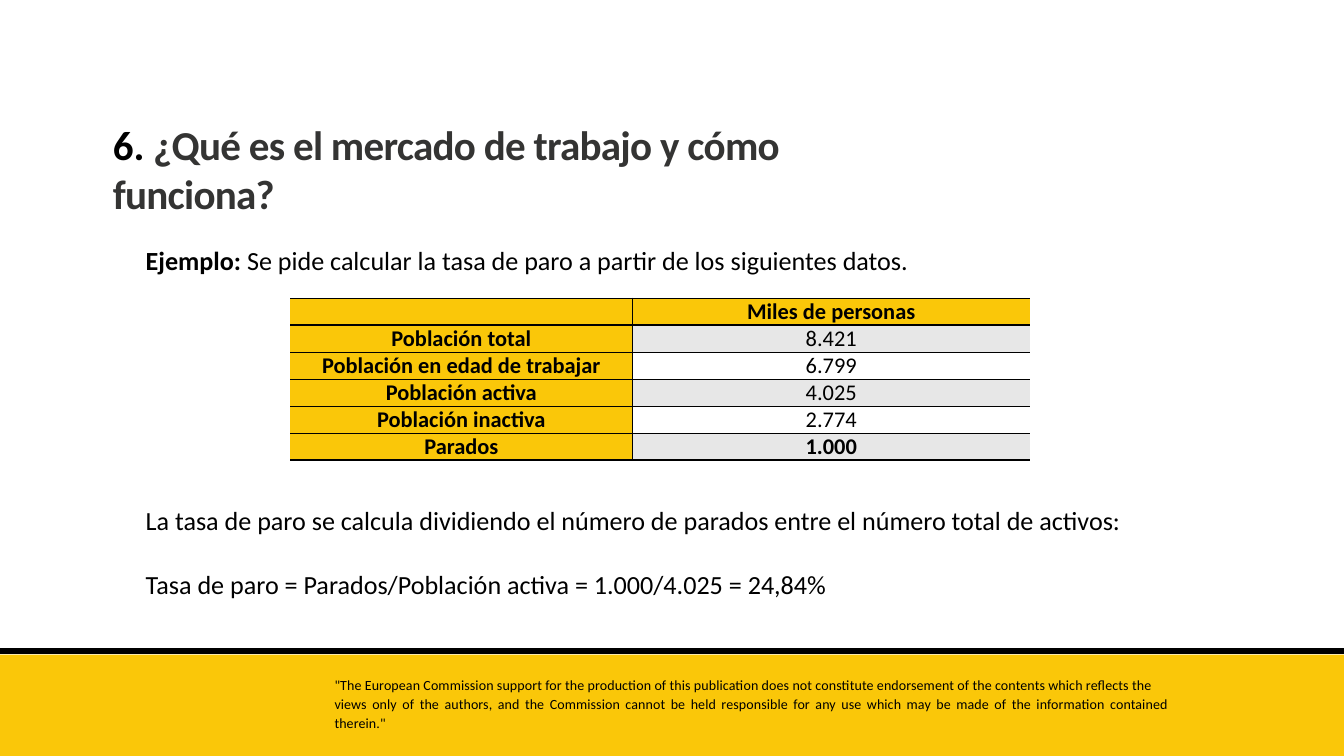
from dataclasses import dataclass
from typing import NamedTuple

import pptx
import pptx.dml.color
import pptx.enum.shapes
import pptx.enum.text
import pptx.oxml
import pptx.oxml.ns
import pptx.util

TITLE_ONLY = 5
SLIDE_WIDTH = pptx.util.Inches(20)
SLIDE_HEIGHT = pptx.util.Inches(11.25)
ALIGN = pptx.enum.text.PP_ALIGN
ANCHOR = pptx.enum.text.MSO_ANCHOR


@dataclass(frozen=True)
class Theme:
    font: str = "Calibri"
    black: str = "000000"
    heading: str = "343433"
    yellow: str = "FAC709"
    bands: tuple[str, str] = ("E7E7E7", "FFFFFF")
    title_size: int = 44
    body_size: int = 28
    table_size: int = 24
    footer_size: int = 15
    thin: int = 1
    thick: int = 2
    rule: float = 6.75


THEME = Theme()


class Area(NamedTuple):
    """A place on the slide, in percent of its width and height."""
    left: float
    top: float
    width: float
    height: float

    def lengths(self) -> tuple[int, int, int, int]:
        return (across(self.left), down(self.top), across(self.width), down(self.height))


class Run(NamedTuple):
    text: str
    bold: bool = False
    color: str = THEME.black
    spacing: float = 0


class Paragraph(NamedTuple):
    runs: list[Run]
    format: dict = {}


class TextBlock(NamedTuple):
    area: Area
    size: int
    paragraphs: list[Paragraph]


class Row(NamedTuple):
    label: str
    value: str
    bold_value: bool = False


TITLE = TextBlock(Area(7.9, 15.29, 55, 14.04), THEME.title_size, [
    Paragraph([
        Run("6.", True),
        Run(" ¿Qué es el mercado de trabajo y cómo funciona?", True, THEME.heading, -0.8),
    ], {"alignment": ALIGN.LEFT}),
])
FOOTER_INDENT = pptx.util.Inches(0.01)
TEXTS = [
    TextBlock(Area(24.35, 89.24, 63.15, 7.82), THEME.footer_size, [
        Paragraph([Run(
            "\"The European Commission support for the production of this publication does not "
            "constitute endorsement of the contents which reflects the", spacing=0.1)],
            {"alignment": ALIGN.JUSTIFY, "line_spacing": pptx.util.Pt(16.1)}),
        Paragraph([Run(
            "views only of the authors, and the Commission cannot be held responsible for any use "
            "which may be made of the information contained therein.\"", spacing=0.1)],
            {"alignment": ALIGN.JUSTIFY, "line_spacing": 1.13}),
    ]),
    TextBlock(Area(10.35, 31.82, 77.55, 5.07), THEME.body_size, [
        Paragraph([
            Run("Ejemplo:", True),
            Run(" Se pide calcular la tasa de paro a partir de los siguientes datos."),
        ]),
    ]),
    TextBlock(Area(10.35, 66.31, 78.4, 13.42), THEME.body_size, [
        Paragraph([Run("La tasa de paro se calcula dividiendo el número de parados entre "
                       "el número total de activos:")]),
        Paragraph([Run("Tasa de paro = Parados/Población activa = 1.000/4.025 = 24,84%")],
                  {"space_before": pptx.util.Pt(34.2)}),
    ]),
]
TABLE_AREA = Area(21.6, 39.47, 55.05, 21.33)
COLUMN_WIDTHS = (25.45, 29.6)
ROWS = [
    Row("", "Miles de personas", True),
    Row("Población total", "8.421"),
    Row("Población en edad de trabajar", "6.799"),
    Row("Población activa", "4.025"),
    Row("Población inactiva", "2.774"),
    Row("Parados", "1.000", True),
]
BAND_AREA = Area(0, 86.58, 100, 13.42)
RULE_TOP = 86.13


def across(percent: float) -> int:
    return round(SLIDE_WIDTH * percent / 100)


def down(percent: float) -> int:
    return round(SLIDE_HEIGHT * percent / 100)


def rgb(color: str) -> pptx.dml.color.RGBColor:
    return pptx.dml.color.RGBColor.from_string(color)


def set_attributes(target, values: dict) -> None:
    for name, value in values.items():
        setattr(target, name, value)


def add_run(paragraph, run: Run, size: int) -> None:
    text_run = paragraph.add_run()
    text_run.text = run.text
    set_attributes(text_run.font, {
        "name": THEME.font, "size": pptx.util.Pt(size), "bold": run.bold})
    text_run.font.color.rgb = rgb(run.color)
    if run.spacing:
        text_run._r.get_or_add_rPr().set("spc", str(round(run.spacing * 100)))


def write_text(shape, block: TextBlock) -> None:
    set_attributes(shape, dict(zip(("left", "top", "width", "height"), block.area.lengths())))
    frame = shape.text_frame
    set_attributes(frame, {
        "word_wrap": True, "vertical_anchor": ANCHOR.TOP,
        "auto_size": pptx.enum.text.MSO_AUTO_SIZE.SHAPE_TO_FIT_TEXT})
    for index, content in enumerate(block.paragraphs):
        paragraph = frame.add_paragraph() if index else frame.paragraphs[0]
        set_attributes(paragraph, content.format)
        if content.format.get("alignment") == ALIGN.JUSTIFY:
            paragraph._p.get_or_add_pPr().set("marL", str(FOOTER_INDENT))
        for run in content.runs:
            add_run(paragraph, run, block.size)


def set_border(cell, side: str, width: float) -> None:
    """Draw one side (L, R, T or B) of a cell; a width of 0 hides it."""
    fill = f'<a:solidFill><a:srgbClr val="{THEME.black}"/></a:solidFill>' if width else "<a:noFill/>"
    cell._tc.get_or_add_tcPr().append(pptx.oxml.parse_xml(
        f'<a:ln{side} {pptx.oxml.ns.nsdecls("a")} w="{pptx.util.Pt(width)}">{fill}</a:ln{side}>'))


def add_data_table(slide) -> None:
    table = slide.shapes.add_table(
        len(ROWS), len(COLUMN_WIDTHS), *TABLE_AREA.lengths()).table
    set_attributes(table, {"first_row": False, "horz_banding": False})
    for column, width in zip(table.columns, COLUMN_WIDTHS):
        column.width = across(width)
    last = len(ROWS) - 1
    margin = pptx.util.Inches(0.05)
    for index, row in enumerate(ROWS):
        band = THEME.yellow if index == 0 else THEME.bands[(index - 1) % 2]
        top = THEME.thick if index <= 1 else THEME.thin
        bottom = THEME.thick if index in (0, last) else THEME.thin
        cells = [(Run(row.label, True), THEME.yellow, 0, THEME.thin),
                 (Run(row.value, row.bold_value), band, THEME.thin, 0)]
        for column, (run, color, left, right) in enumerate(cells):
            cell = table.cell(index, column)
            set_attributes(cell, {
                "margin_left": margin, "margin_right": margin, "margin_top": 0,
                "margin_bottom": 0, "vertical_anchor": ANCHOR.BOTTOM})
            for side, width in zip("LRTB", (left, right, top, bottom)):
                set_border(cell, side, width)
            cell.fill.solid()
            cell.fill.fore_color.rgb = rgb(color)
            paragraph = cell.text_frame.paragraphs[0]
            paragraph.alignment = ALIGN.CENTER
            if run.text:
                add_run(paragraph, run, THEME.table_size)


def add_footer_band(slide) -> None:
    band = slide.shapes.add_shape(
        pptx.enum.shapes.MSO_SHAPE.RECTANGLE, *BAND_AREA.lengths())
    band.shadow.inherit = False
    band.fill.solid()
    band.fill.fore_color.rgb = rgb(THEME.yellow)
    band.line.fill.background()
    rule = slide.shapes.add_connector(
        pptx.enum.shapes.MSO_CONNECTOR.STRAIGHT, 0, down(RULE_TOP), SLIDE_WIDTH, down(RULE_TOP))
    rule.line.color.rgb = rgb(THEME.black)
    rule.line.width = pptx.util.Pt(THEME.rule)
    rule._element.spPr.append(
        pptx.oxml.parse_xml(f'<a:effectLst {pptx.oxml.ns.nsdecls("a")}/>'))


def main() -> None:
    presentation = pptx.Presentation()
    set_attributes(presentation, {"slide_width": SLIDE_WIDTH, "slide_height": SLIDE_HEIGHT})
    slide = presentation.slides.add_slide(presentation.slide_layouts[TITLE_ONLY])
    add_footer_band(slide)
    write_text(slide.shapes.title, TITLE)
    for block in TEXTS:
        write_text(slide.shapes.add_textbox(*block.area.lengths()), block)
    add_data_table(slide)
    presentation.save("out.pptx")


if __name__ == "__main__":
    main()
